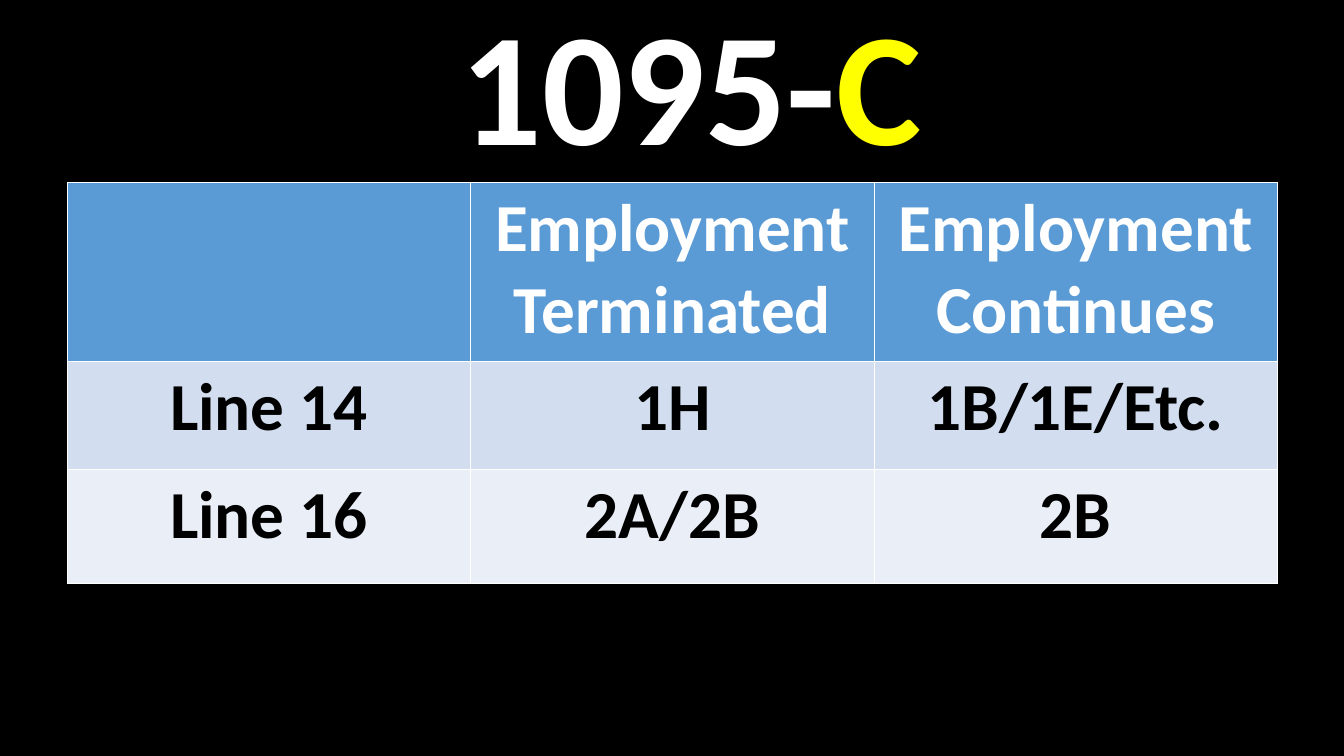
from dataclasses import dataclass

from pptx import Presentation
from pptx.dml.color import RGBColor
from pptx.enum.text import MSO_ANCHOR, PP_ALIGN
from pptx.util import Inches, Pt


@dataclass(frozen=True)
class Theme:
    font: str = "Calibri"
    title_size: int = 115
    table_size: int = 48
    black: RGBColor = RGBColor(0x00, 0x00, 0x00)
    white: RGBColor = RGBColor(0xFF, 0xFF, 0xFF)
    yellow: RGBColor = RGBColor(0xFF, 0xFF, 0x00)
    header_fill: RGBColor = RGBColor(0x5B, 0x9B, 0xD5)
    band_fills: tuple = (RGBColor(0xD2, 0xDE, 0xEF), RGBColor(0xEA, 0xEF, 0xF7))


THEME = Theme()

CODE_ROWS = [
    ["", "Employment Terminated", "Employment Continues"],
    ["Line 14", "1H", "1B/1E/Etc."],
    ["Line 16", "2A/2B", "2B"],
]
ROW_HEIGHTS = [1.78, 1.07, 1.13]
COLUMN_WIDTH = 4


def style_paragraph(paragraph, size):
    paragraph.alignment = PP_ALIGN.CENTER
    paragraph.font.name = THEME.font
    paragraph.font.size = Pt(size)
    paragraph.font.bold = True


def add_title(slide, colored_parts):
    """Add a one-line title whose parts each have their own colour."""
    box = slide.shapes.add_textbox(Inches(0.38), Inches(0.05), Inches(12.95), Inches(1.75))
    frame = box.text_frame
    frame.word_wrap = True
    frame.vertical_anchor = MSO_ANCHOR.MIDDLE
    frame.margin_top = frame.margin_bottom = 0
    paragraph = frame.paragraphs[0]
    style_paragraph(paragraph, THEME.title_size)
    paragraph.line_spacing = 0.9
    for text, color in colored_parts:
        run = paragraph.add_run()
        run.text = text
        run.font.color.rgb = color


def fill_cell(cell, text, fill, color):
    cell.fill.solid()
    cell.fill.fore_color.rgb = fill
    paragraph = cell.text_frame.paragraphs[0]
    style_paragraph(paragraph, THEME.table_size)
    paragraph.font.color.rgb = color
    if text:
        paragraph.text = text


def add_code_table(slide):
    """Add the table; its built-in style draws the white borders."""
    column_count = len(CODE_ROWS[0])
    table = slide.shapes.add_table(
        len(CODE_ROWS), column_count, Inches(0.67), Inches(1.81),
        Inches(COLUMN_WIDTH * column_count), Inches(sum(ROW_HEIGHTS)),
    ).table
    for column in table.columns:
        column.width = Inches(COLUMN_WIDTH)
    for row_index, (height, texts) in enumerate(zip(ROW_HEIGHTS, CODE_ROWS)):
        table.rows[row_index].height = Inches(height)
        if row_index == 0:
            fill, color = THEME.header_fill, THEME.white
        else:
            fill, color = THEME.band_fills[(row_index - 1) % 2], THEME.black
        for column_index, text in enumerate(texts):
            fill_cell(table.cell(row_index, column_index), text, fill, color)


def main():
    presentation = Presentation()
    presentation.slide_width = Inches(13.33)
    presentation.slide_height = Inches(7.5)
    slide = presentation.slides.add_slide(presentation.slide_layouts[6])
    slide.background.fill.solid()
    slide.background.fill.fore_color.rgb = THEME.black
    add_title(slide, [("1095-", THEME.white), ("C", THEME.yellow)])
    add_code_table(slide)
    presentation.save("out.pptx")


if __name__ == "__main__":
    main()
